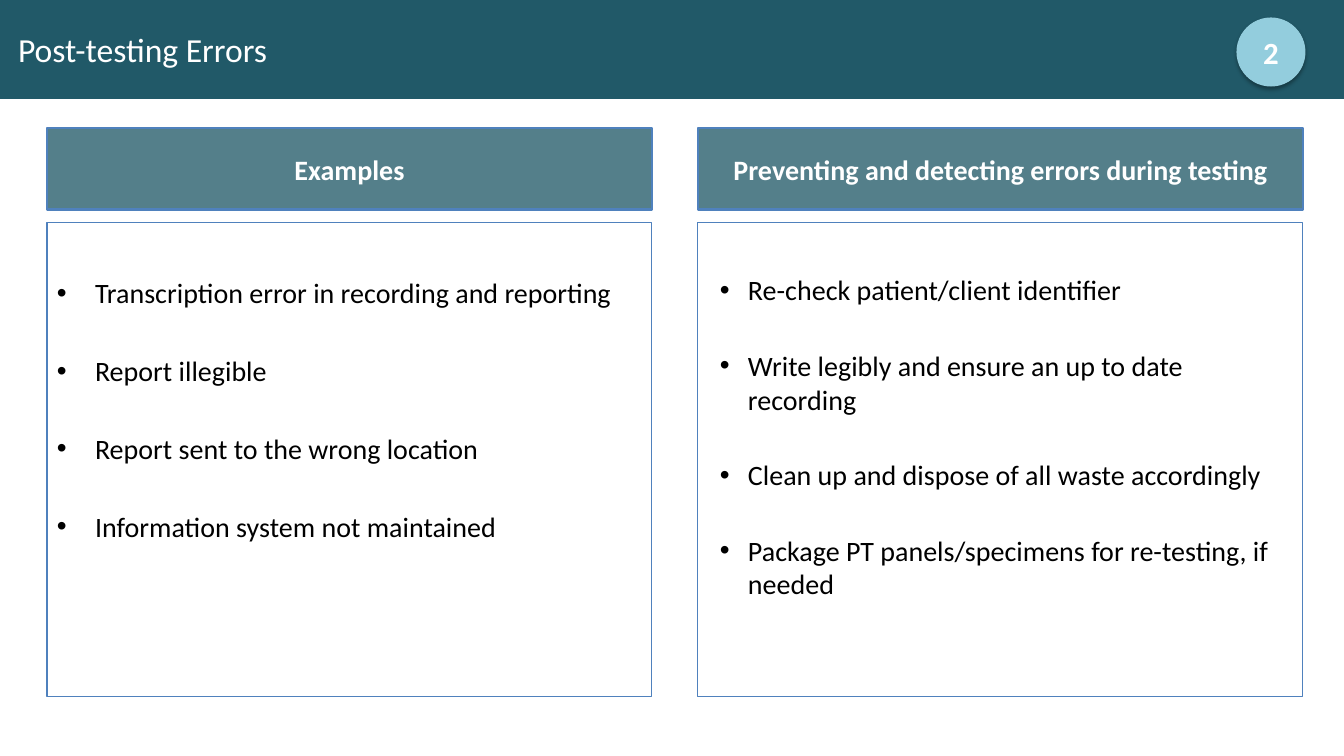
"""Build the slide on post-testing errors and how to prevent them."""
import lxml.etree
import pptx
import pptx.dml.color
import pptx.enum.shapes
import pptx.enum.text
import pptx.oxml.ns
import pptx.util

PX = 914400 / 100.8
THEME = {
    "font": "Calibri",
    "teal": "215968", "aqua": "93CDDD", "edge": "4F81BD",
    "light": "FFFFFF", "dark": "000000",
    "title": 24, "badge": 22, "text": 20,
}
SHAPES = pptx.enum.shapes.MSO_SHAPE
ANCHOR = pptx.enum.text.MSO_ANCHOR
ALIGN = pptx.enum.text.PP_ALIGN
qn = pptx.oxml.ns.qn


def add_panel(box, kind=SHAPES.RECTANGLE, fill=None, line=None, width=0.75):
    panel = slide.shapes.add_shape(kind, *(round(side * PX) for side in box))
    panel.shadow.inherit = False
    if fill:
        panel.fill.solid()
        panel.fill.fore_color.rgb = pptx.dml.color.RGBColor.from_string(fill)
    else:
        panel.fill.background()
    if line:
        panel.line.color.rgb = pptx.dml.color.RGBColor.from_string(line)
        panel.line.width = pptx.util.Pt(width)
    else:
        panel.line.fill.background()
    return panel


def write(panel, lines, size=THEME["text"], color=THEME["light"], bold=False,
          align=ALIGN.CENTER, anchor=ANCHOR.MIDDLE, inset=(10, 5), gap=0,
          indent=0, hanging=0):
    frame = panel.text_frame
    frame.word_wrap = True
    frame.vertical_anchor = anchor
    frame.margin_left = round(inset[0] * PX)
    frame.margin_top = round(inset[1] * PX)
    for number, line in enumerate(lines):
        paragraph = frame.add_paragraph() if number else frame.paragraphs[0]
        paragraph.alignment = align
        paragraph.space_before = pptx.util.Pt(gap if number else 0)
        run = paragraph.add_run()
        run.text = line
        run.font.name = THEME["font"]
        run.font.size = pptx.util.Pt(size)
        run.font.bold = bold
        run.font.color.rgb = pptx.dml.color.RGBColor.from_string(color)
        if hanging:
            properties = paragraph._p.get_or_add_pPr()
            properties.set("marL", str(round(indent * PX)))
            properties.set("indent", str(round(-hanging * PX)))
            lxml.etree.SubElement(properties, qn("a:buFont"), typeface="Arial")
            lxml.etree.SubElement(properties, qn("a:buChar"), char="•")


deck = pptx.Presentation()
deck.slide_width = round(1344 * PX)
deck.slide_height = round(756 * PX)
slide = deck.slides.add_slide(deck.slide_layouts[6])

title_bar = add_panel((0, 0, 1344, 99), fill=THEME["teal"])
write(title_bar, ["Post-testing Errors"], size=THEME["title"],
      align=ALIGN.LEFT, inset=(18, 5))

columns = [
    (47, "Examples",
     ["Transcription error in recording and reporting", "Report illegible",
      "Report sent to the wrong location", "Information system not maintained"],
     {"inset": (10, 53), "gap": 31.5, "indent": 38, "hanging": 38}),
    (698, "Preventing and detecting errors during testing",
     ["Re-check patient/client identifier",
      "Write legibly and ensure an up to date recording",
      "Clean up and dispose of all waste accordingly",
      "Package PT panels/specimens for re-testing, if needed"],
     {"inset": (10, 50), "gap": 30, "indent": 40, "hanging": 28}),
]
for left, heading, points, layout in columns:
    body = add_panel((left, 223, 605, 474), line=THEME["edge"])
    write(body, points, color=THEME["dark"], align=ALIGN.LEFT,
          anchor=ANCHOR.TOP, **layout)
    header = add_panel((left, 128, 605, 82), fill=THEME["teal"],
                       line=THEME["edge"], width=2)
    tint = header._element.spPr.find(qn("a:solidFill")).find(qn("a:srgbClr"))
    lxml.etree.SubElement(tint, qn("a:alpha"), val="77000")
    write(header, [heading], bold=True)

badge = add_panel((1237, 18, 68, 68), SHAPES.OVAL, THEME["aqua"], THEME["aqua"])
write(badge, ["2"], size=THEME["badge"], bold=True)
shadow = lxml.etree.SubElement(
    badge._element.spPr.find(qn("a:effectLst")), qn("a:outerShdw"),
    blurRad=str(pptx.util.Pt(3.1)), dist=str(pptx.util.Pt(1.8)),
    dir="5400000", rotWithShape="0")
shade = lxml.etree.SubElement(shadow, qn("a:srgbClr"), val=THEME["dark"])
lxml.etree.SubElement(shade, qn("a:alpha"), val="35000")

deck.save("out.pptx")
